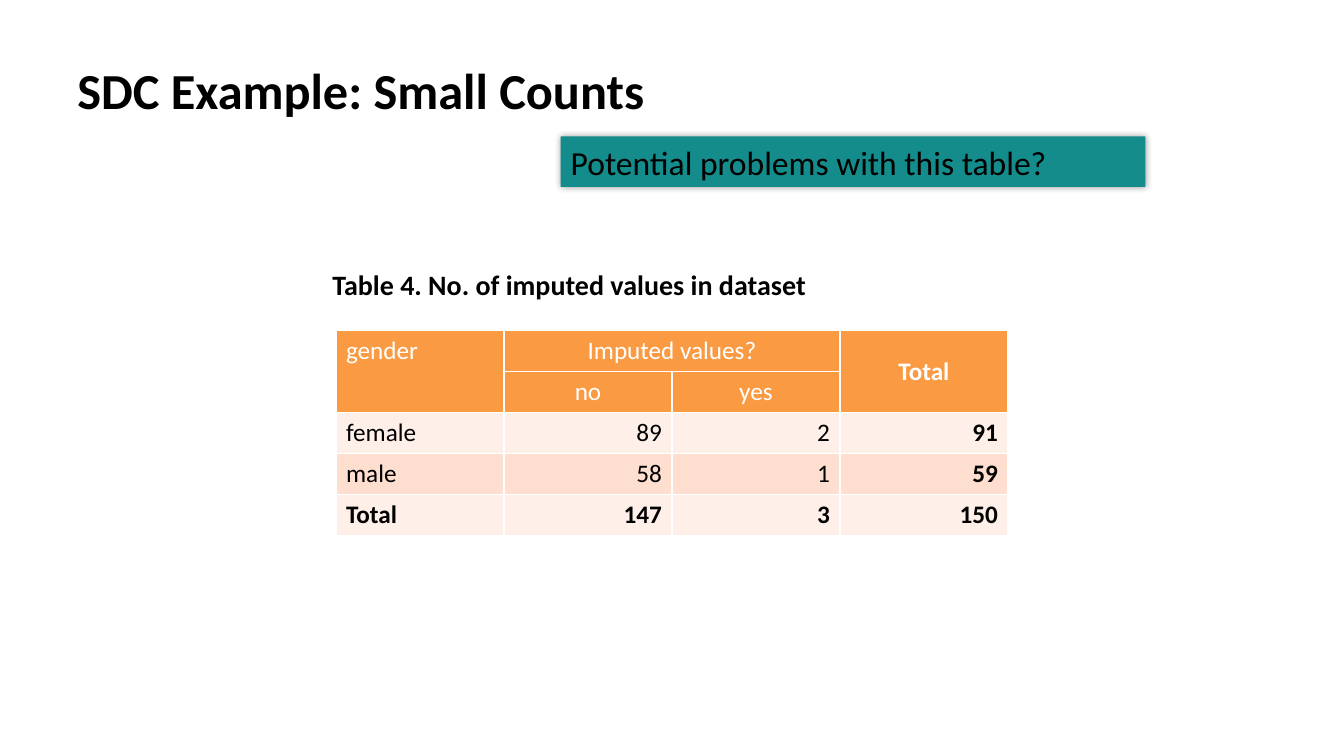
from lxml.etree import SubElement
from pptx import Presentation
from pptx.dml.color import RGBColor
from pptx.enum.shapes import MSO_SHAPE
from pptx.enum.text import MSO_ANCHOR, MSO_AUTO_SIZE, PP_ALIGN
from pptx.oxml.ns import qn
from pptx.util import Emu, Pt

BLACK, WHITE, TEAL = "000000", "FFFFFF", "148C8B"
ORANGE, PALE, PEACH = "FA9A42", "FEEFE9", "FDDECF"
LEFT, CENTER, RIGHT = PP_ALIGN.LEFT, PP_ALIGN.CENTER, PP_ALIGN.RIGHT


def px(n):
    return Emu(n * 9525)


def rgb(color):
    return RGBColor.from_string(color)


class Deck:
    font = "Calibri"

    def __init__(self):
        self.prs = Presentation()
        self.prs.slide_width, self.prs.slide_height = px(1280), px(720)
        self.s = self.prs.slides.add_slide(self.prs.slide_layouts[5])

    def add_run(self, tf, text, size, color=BLACK, bold=False, align=LEFT):
        p = tf.paragraphs[0]
        p.alignment = align
        r = p.add_run()
        r.text = text
        r.font.name, r.font.size, r.font.bold = self.font, Pt(size), bold
        r.font.color.rgb = rgb(color)

    def title(self, text, x, y, w, h):
        sp = self.s.shapes.title
        sp.left, sp.top, sp.width, sp.height = px(x), px(y), px(w), px(h)
        tf = sp.text_frame
        tf.vertical_anchor = MSO_ANCHOR.TOP
        tf.auto_size = MSO_AUTO_SIZE.NONE
        tf.paragraphs[0].line_spacing = 0.9
        self.add_run(tf, text, 36, bold=True)

    def text(self, text, x, y, w, h, size, bold=False):
        tf = self.s.shapes.add_textbox(px(x), px(y), px(w), px(h)).text_frame
        tf.word_wrap = True
        self.add_run(tf, text, size, bold=bold)

    def banner(self, text, x, y, w, h, size):
        sp = self.s.shapes.add_shape(MSO_SHAPE.RECTANGLE, px(x), px(y), px(w), px(h))
        sp.fill.solid()
        sp.fill.fore_color.rgb = rgb(TEAL)
        sp.line.fill.background()
        # Soft shadow on all sides
        sp.shadow.inherit = False
        effects = sp._element.spPr.find(qn("a:effectLst"))
        shadow = SubElement(effects, qn("a:outerShdw"), blurRad=str(Pt(5)), dist="0", dir="0")
        shade = SubElement(shadow, qn("a:srgbClr"), val=BLACK)
        SubElement(shade, qn("a:alpha"), val="40000")
        sp.text_frame.vertical_anchor = MSO_ANCHOR.TOP
        self.add_run(sp.text_frame, text, size)

    def style_cell(self, cell, fill):
        tcPr = cell._tc.get_or_add_tcPr()
        for side in ("lnL", "lnR", "lnT", "lnB"):
            ln = SubElement(tcPr, qn("a:" + side), w=str(Pt(1)))
            SubElement(SubElement(ln, qn("a:solidFill")), qn("a:srgbClr"), val=WHITE)
        cell.fill.solid()
        cell.fill.fore_color.rgb = rgb(fill)

    def table(self, rows, fills, merges, x, y, col_w, row_h, size):
        n, m = len(rows), len(rows[0])
        frame = self.s.shapes.add_table(n, m, px(x), px(y), px(col_w * m), px(row_h * n))
        t = frame.table
        for col in t.columns:
            col.width = px(col_w)
        for i, row in enumerate(rows):
            t.rows[i].height = px(row_h)
            header = fills[i] == ORANGE
            for j, value in enumerate(row):
                cell = t.cell(i, j)
                self.style_cell(cell, fills[i])
                if value:
                    align = LEFT if j == 0 else CENTER if header else RIGHT
                    bold = j == m - 1 or i == n - 1
                    color = WHITE if header else BLACK
                    self.add_run(cell.text_frame, value, size, color, bold, align)
        for first, last in merges:
            t.cell(*first).merge(t.cell(*last))
        t.cell(0, m - 1).vertical_anchor = MSO_ANCHOR.MIDDLE


def main():
    deck = Deck()

    # Heading and question
    deck.title("SDC Example: Small Counts", 64, 58, 1118, 119)
    deck.banner("Potential problems with this table?", 534, 130, 557, 48, 24)

    # Table of counts with its caption
    rows = [
        ["gender", "Imputed values?", "", "Total"],
        ["", "no", "yes", ""],
        ["female", "89", "2", "91"],
        ["male", "58", "1", "59"],
        ["Total", "147", "3", "150"],
    ]
    fills = [ORANGE, ORANGE, PALE, PEACH, PALE]
    merges = [((0, 0), (1, 0)), ((0, 1), (0, 2)), ((0, 3), (1, 3))]
    deck.table(rows, fills, merges, 320, 315, 160, 39, 18)
    deck.text("Table 4. No. of imputed values in dataset", 307, 250, 630, 42, 20, bold=True)

    deck.prs.save("out.pptx")


if __name__ == "__main__":
    main()
